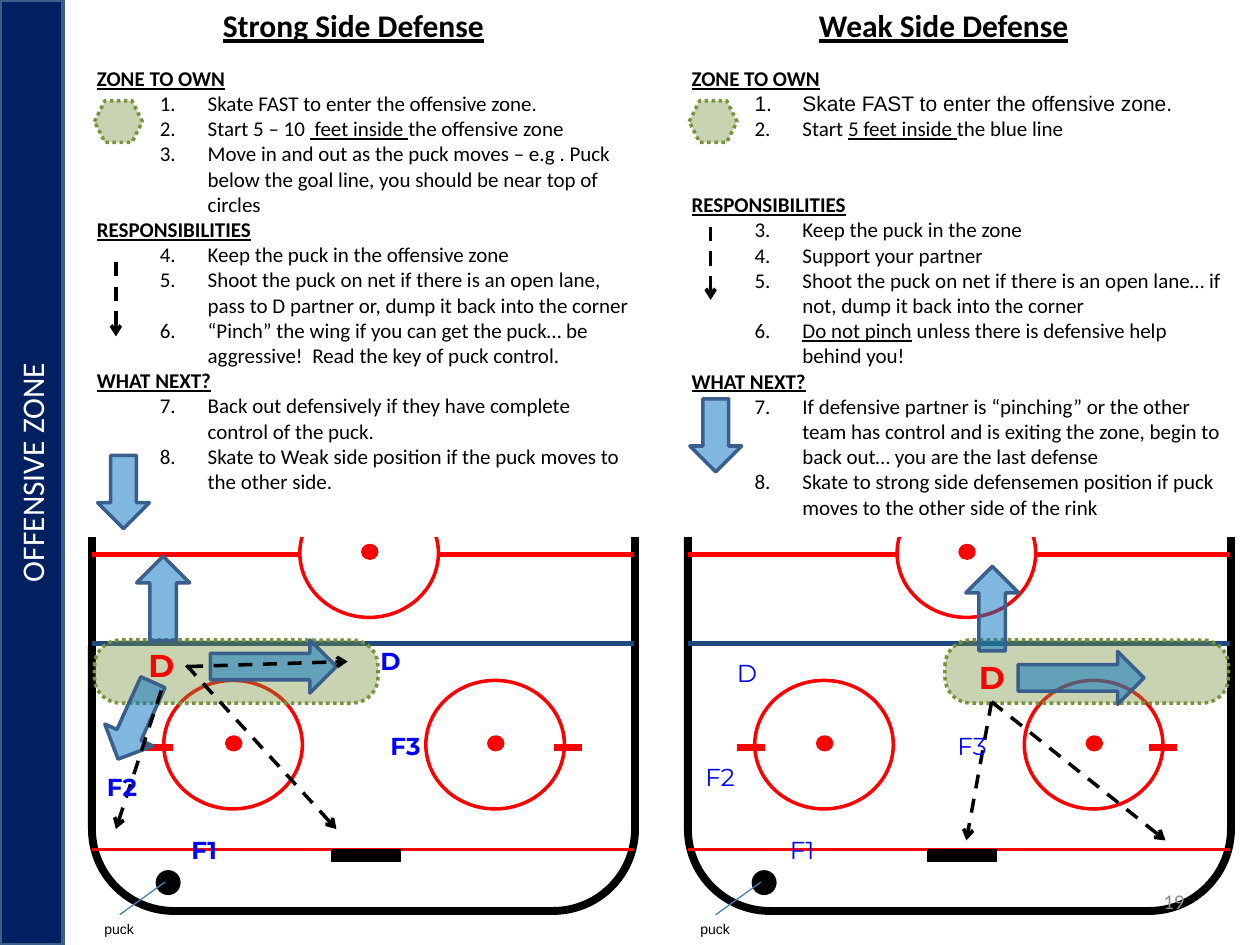
from lxml import etree
from pptx import Presentation
from pptx.dml.color import RGBColor
from pptx.enum import dml, shapes, text
from pptx.oxml import ns
from pptx.util import Inches, Pt

BLACK = RGBColor(0x00, 0x00, 0x00)
WHITE = RGBColor(0xFF, 0xFF, 0xFF)
RED = RGBColor(0xFF, 0x00, 0x00)
BLUE = RGBColor(0x00, 0x00, 0xFF)
NAVY = RGBColor(0x00, 0x20, 0x60)
BLUE_LINE = RGBColor(0x1F, 0x49, 0x7D)
EDGE = RGBColor(0x3A, 0x5F, 0x8C)
POINTER = RGBColor(0x4B, 0x7E, 0xBC)
ARROW = RGBColor(0x00, 0x70, 0xC0)
GREEN = RGBColor(0x77, 0x93, 0x3C)
GRAY = RGBColor(0x8C, 0x8C, 0x8C)

PRESET = shapes.MSO_SHAPE
ALIGN = text.PP_ALIGN
DASH = dml.MSO_LINE
TOP, BOTTOM, RIGHT = 0, 2, 3
RINK_STEP = 4.73

STRONG_SIDE = [
    ("ZONE TO OWN", [
        "Skate FAST to enter the offensive zone.",
        "Start 5 – 10 _ feet inside _the offensive zone",
        "Move in and out as the puck moves – e.g . Puck below the goal line, "
        "you should be near top of circles"]),
    ("RESPONSIBILITIES", [
        "Keep the puck in the offensive zone",
        "Shoot the puck on net if there is an open lane, pass to D partner or, "
        "dump it back into the corner",
        "“Pinch” the wing if you can get the puck… be aggressive!  "
        "Read the key of puck control."]),
    ("WHAT NEXT?", [
        "Back out defensively if they have complete control of the puck.",
        "Skate to Weak side position if the puck moves to the other side."]),
]
WEAK_SIDE = [
    ("ZONE TO OWN", [
        "Skate FAST to enter the offensive zone.",
        "Start _5 feet inside _the blue line"]),
    ("RESPONSIBILITIES", [
        "Keep the puck in the zone",
        "Support your partner",
        "Shoot the puck on net if there is an open lane… if not, "
        "dump it back into the corner",
        "_Do not pinch_ unless there is defensive help behind you!"]),
    ("WHAT NEXT?", [
        "If defensive partner is “pinching” or the other team has control and is "
        "exiting the zone, begin to back out… you are the last defense",
        "Skate to strong side defensemen position if puck moves to the other "
        "side of the rink"]),
]


def write(paragraph, content, size=12, font="Calibri", color=BLACK, bold=False,
          underline=False, align=ALIGN.LEFT):
    paragraph.alignment = align
    for index, piece in enumerate(content.split("_")):
        if piece:
            run = paragraph.add_run()
            run.text = piece
            run.font.size, run.font.name = Pt(size), font
            run.font.color.rgb = color
            run.font.bold = bold
            run.font.underline = underline or index % 2 == 1


def add_label(parent, box, content, wrap=False, anchor=text.MSO_ANCHOR.TOP, **style):
    label = parent.shapes.add_textbox(*map(Inches, box))
    frame = label.text_frame
    frame.word_wrap = wrap
    frame.vertical_anchor = anchor
    write(frame.paragraphs[0], content, **style)
    return label


def add_preset(parent, preset, box, fill=None, line=BLACK, width=2, dash=None,
               opacity=None, rotation=0, corner=None):
    shape = parent.shapes.add_shape(preset, *map(Inches, box))
    shape.shadow.inherit = False
    shape.rotation = rotation
    if corner is not None:
        shape.adjustments[0] = corner
    if fill is None:
        shape.fill.background()
    else:
        shape.fill.solid()
        shape.fill.fore_color.rgb = fill
    if opacity is not None:
        color = shape.fill._xPr.find(".//" + ns.qn("a:srgbClr"))
        etree.SubElement(color, ns.qn("a:alpha"), val=str(opacity * 1000))
    shape.line.color.rgb = line
    shape.line.width = Pt(width)
    if dash is not None:
        shape.line.dash_style = dash
    return shape


def add_line(parent, start, end, color, width, origin=None, site=None):
    line = parent.shapes.add_connector(
        shapes.MSO_CONNECTOR.STRAIGHT, *map(Inches, (*start, *end)))
    line.line.color.rgb = color
    line.line.width = Pt(width)
    if origin is not None:
        line.begin_connect(origin, site)
    etree.SubElement(line._element.spPr, ns.qn("a:effectLst"))
    return line


def add_pass(slide, start, end, origin=None, site=None):
    line = add_line(slide, start, end, BLACK, 2, origin, site)
    line.line.dash_style = DASH.DASH
    etree.SubElement(line.line._get_or_add_ln(), ns.qn("a:tailEnd"), type="arrow")


def add_block_arrow(slide, box, rotation=0):
    add_preset(slide, PRESET.RIGHT_ARROW, box, ARROW, EDGE, opacity=50, rotation=rotation)


def add_zone(slide, preset, box, corner=None):
    add_preset(slide, preset, box, GREEN, GREEN, dash=DASH.ROUND_DOT,
               opacity=40, corner=corner)


def add_faceoff_circle(rink, left, top):
    add_preset(rink, PRESET.OVAL, (left, top, 1.1, 1.02), WHITE, RED)
    add_preset(rink, PRESET.OVAL, (left + 0.5, top + 0.45, 0.11, 0.1), RED, RED)


def add_rink(slide, offset, circles, hash_marks):
    rink = slide.shapes.add_group_shape()
    add_preset(rink, PRESET.ROUNDED_RECTANGLE, (offset + 0.73, 2.85, 4.31, 4.38),
               width=4.5, corner=0.151)
    left_circle, right_circle, center_circle = circles
    for left in (left_circle, right_circle):
        add_faceoff_circle(rink, left, 5.4)
    for left in hash_marks:
        add_line(rink, (left, 5.93), (left + 0.22, 5.93), RED, 4)
    for y, color, width in ((5.11, BLUE_LINE, 3), (4.4, RED, 3), (6.74, RED, 1.5)):
        add_line(rink, (offset + 0.73, y), (offset + 5.03, y), color, width)
    add_preset(rink, PRESET.RECTANGLE, (offset + 2.63, 6.74, 0.55, 0.1), BLACK, width=0.5)
    add_preset(rink, PRESET.OVAL, (offset + 1.25, 6.92, 0.17, 0.17), BLACK)
    add_faceoff_circle(rink, center_circle, 3.88)
    add_preset(rink, PRESET.RECTANGLE, (offset + 0.67, 2.67, 4.5, 1.58), WHITE, WHITE)
    puck = add_label(rink, (offset + 0.73, 7.26, 0.44, 0.24), "puck", size=8, font="Arial")
    add_line(rink, (offset + 0.95, 7.26), (offset + 1.31, 7), POINTER, 0.75, puck, TOP)


def add_playbook(slide, left, sections, first_font="Calibri", gap=0):
    box = slide.shapes.add_textbox(*map(Inches, (left, 0.47, 4.42, 3.74)))
    frame = box.text_frame
    frame.word_wrap = True
    paragraph = frame.paragraphs[0]
    for number, (heading, items) in enumerate(sections):
        if number:
            paragraph = frame.add_paragraph()
        if number == 1:
            paragraph.space_before = Pt(gap)
        write(paragraph, heading, bold=True, underline=True)
        for index, item in enumerate(items):
            paragraph = frame.add_paragraph()
            paragraph.level = 1
            font = first_font if number == index == 0 else "Calibri"
            write(paragraph, item, font=font)
            properties = paragraph._p.get_or_add_pPr()
            properties.set("marL", str(Inches(0.88)))
            properties.set("indent", str(Inches(-0.38)))
            etree.SubElement(properties, ns.qn("a:buAutoNum"), type="arabicPeriod")


def add_sidebar(slide):
    sidebar = add_preset(slide, PRESET.RECTANGLE, (0, 0, 0.5, 7.5), NAVY, EDGE)
    frame = sidebar.text_frame
    frame.vertical_anchor = text.MSO_ANCHOR.MIDDLE
    frame._txBody.bodyPr.set("vert", "vert270")
    write(frame.paragraphs[0], "OFFENSIVE ZONE", size=18, color=WHITE, align=ALIGN.CENTER)


def add_title(slide, left, width, title):
    add_label(slide, (left, 0, width, 0.4), title, size=18, bold=True,
              underline=True, align=ALIGN.CENTER)


def add_player(slide, left, top, name, bold=False):
    width = 0.35 if name == "D" else 0.47
    add_label(slide, (left, top, width, 0.34), name, size=14, font="Montserrat",
              color=BLUE, bold=bold)


def add_defender(slide, left, top):
    return add_label(slide, (left, top, 0.4, 0.4), "D", size=18, font="Montserrat",
                     color=RED, bold=True)


def add_strong_side(slide):
    add_rink(slide, 0, (1.3, 3.38, 2.38), (1.15, 4.4))
    add_playbook(slide, 0.67, STRONG_SIDE)
    add_title(slide, 1.66, 2.29, "Strong Side Defense")
    add_block_arrow(slide, (0.69, 3.7, 0.58, 0.41), 90)
    add_pass(slide, (0.92, 2.08), (0.92, 2.67))
    add_zone(slide, PRESET.HEXAGON, (0.75, 0.8, 0.38, 0.33))
    add_zone(slide, PRESET.ROUNDED_RECTANGLE, (0.75, 5.08, 2.25, 0.5), 0.41)
    defender = add_defender(slide, 1.08, 5.08)
    add_pass(slide, (1.48, 5.28), (2.67, 6.58), defender, RIGHT)
    add_block_arrow(slide, (0.96, 4.54, 0.67, 0.42), 270)
    add_block_arrow(slide, (1.67, 5.08, 1, 0.42))
    add_block_arrow(slide, (0.74, 5.51, 0.67, 0.42), 114.4)
    add_pass(slide, (1.28, 5.48), (0.92, 6.58), defender, BOTTOM)
    add_pass(slide, (1.5, 5.29), (2.76, 5.25))
    for left, top, name in ((1.42, 6.58, "F1"), (0.75, 6.08, "F2"),
                            (2.92, 5.08, "D"), (3, 5.75, "F3")):
        add_player(slide, left, top, name, bold=True)


def add_weak_side(slide):
    add_rink(slide, RINK_STEP, (5.99, 8.13, 7.12), (5.85, 9.12))
    add_title(slide, 6.39, 2.2, "Weak Side Defense")
    add_zone(slide, PRESET.HEXAGON, (5.47, 0.8, 0.38, 0.33))
    add_zone(slide, PRESET.ROUNDED_RECTANGLE, (7.5, 5.08, 2.25, 0.5), 0.41)
    defender = add_defender(slide, 7.67, 5.17)
    for end in ((9.25, 6.67), (7.67, 6.67)):
        add_pass(slide, (7.87, 5.57), end, defender, BOTTOM)
    add_block_arrow(slide, (7.54, 4.62, 0.67, 0.42), 270)
    add_block_arrow(slide, (8.08, 5.17, 1, 0.42))
    add_playbook(slide, 5.39, WEAK_SIDE, first_font="Arial", gap=29)
    add_block_arrow(slide, (5.39, 3.25, 0.58, 0.41), 90)
    add_pass(slide, (5.64, 1.8), (5.64, 2.38))
    for left, top, name in ((6.17, 6.58, "F1"), (5.5, 6, "F2"),
                            (5.75, 5.17, "D"), (7.5, 5.75, "F3")):
        add_player(slide, left, top, name)


def main():
    presentation = Presentation()
    presentation.slide_width, presentation.slide_height = Inches(10), Inches(7.5)
    slide = presentation.slides.add_slide(presentation.slide_layouts[6])
    add_sidebar(slide)
    add_strong_side(slide)
    add_weak_side(slide)
    add_label(slide, (7.17, 6.95, 2.33, 0.4), "19", wrap=True,
              anchor=text.MSO_ANCHOR.MIDDLE, color=GRAY, align=ALIGN.RIGHT)
    presentation.save("out.pptx")


if __name__ == "__main__":
    main()
